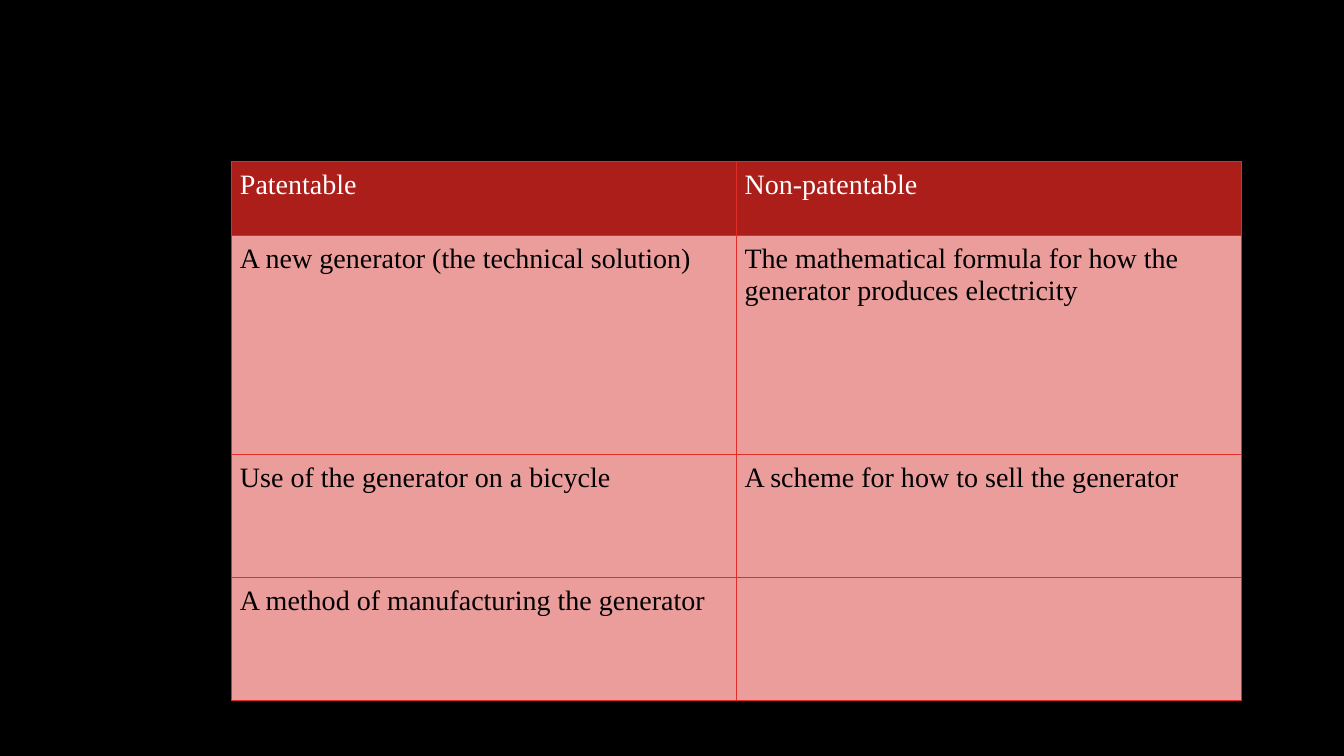
from lxml.etree import SubElement
from pptx import Presentation
from pptx.dml.color import RGBColor
from pptx.oxml.ns import qn
from pptx.util import Inches, Pt

ROWS = [
    ("Patentable", "Non-patentable"),
    ("A new generator (the technical solution)",
     "The mathematical formula for how the generator produces electricity"),
    ("Use of the generator on a bicycle", "A scheme for how to sell the generator"),
    ("A method of manufacturing the generator", ""),
]
ROW_HEIGHTS = [0.74, 2.17, 1.22, 1.22]
WIDTH, HEIGHT = 13.33, 7.5


def color(code):
    return RGBColor.from_string(code)


class PatentSlide:
    """Hold the style and the current slide, and draw its elements."""

    font_name = "Times New Roman"
    font_size = Pt(20)
    margin = Inches(0.08)
    border = "DF2E28"
    header = ("AC1E1A", "FFFFFF")
    body = ("EB9D9C", "000000")

    def __init__(self, presentation, background):
        self.slide = presentation.slides.add_slide(presentation.slide_layouts[6])
        fill = self.slide.background.fill
        fill.solid()
        fill.fore_color.rgb = color(background)

    def add_borders(self, cell):
        properties = cell._tc.get_or_add_tcPr()
        for index, side in enumerate(("lnL", "lnR", "lnT", "lnB")):
            line = properties.makeelement(qn(f"a:{side}"), {"w": str(Pt(0.75))})
            solid = SubElement(line, qn("a:solidFill"))
            SubElement(solid, qn("a:srgbClr"), val=self.border)
            properties.insert(index, line)

    def style_cell(self, cell, text, fill_code, text_code):
        cell.fill.solid()
        cell.fill.fore_color.rgb = color(fill_code)
        cell.margin_left = cell.margin_right = self.margin
        cell.margin_top = cell.margin_bottom = self.margin
        cell.text = text
        font = cell.text_frame.paragraphs[0].font
        font.name, font.size = self.font_name, self.font_size
        font.color.rgb = color(text_code)
        self.add_borders(cell)

    def add_table(self, rows, heights, left, top, width):
        table = self.slide.shapes.add_table(
            len(rows), len(rows[0]), Inches(left * WIDTH), Inches(top * HEIGHT),
            Inches(width * WIDTH), Inches(sum(heights))).table
        for row_index, (texts, height) in enumerate(zip(rows, heights)):
            table.rows[row_index].height = Inches(height)
            palette = self.body if row_index else self.header
            for column_index, text in enumerate(texts):
                self.style_cell(table.cell(row_index, column_index), text, *palette)


def main():
    presentation = Presentation()
    presentation.slide_width = Inches(WIDTH)
    presentation.slide_height = Inches(HEIGHT)
    slide = PatentSlide(presentation, "000000")
    slide.add_table(ROWS, ROW_HEIGHTS, left=2.3 / WIDTH, top=1.6 / HEIGHT,
                    width=10.01 / WIDTH)
    presentation.save("out.pptx")


if __name__ == "__main__":
    main()
